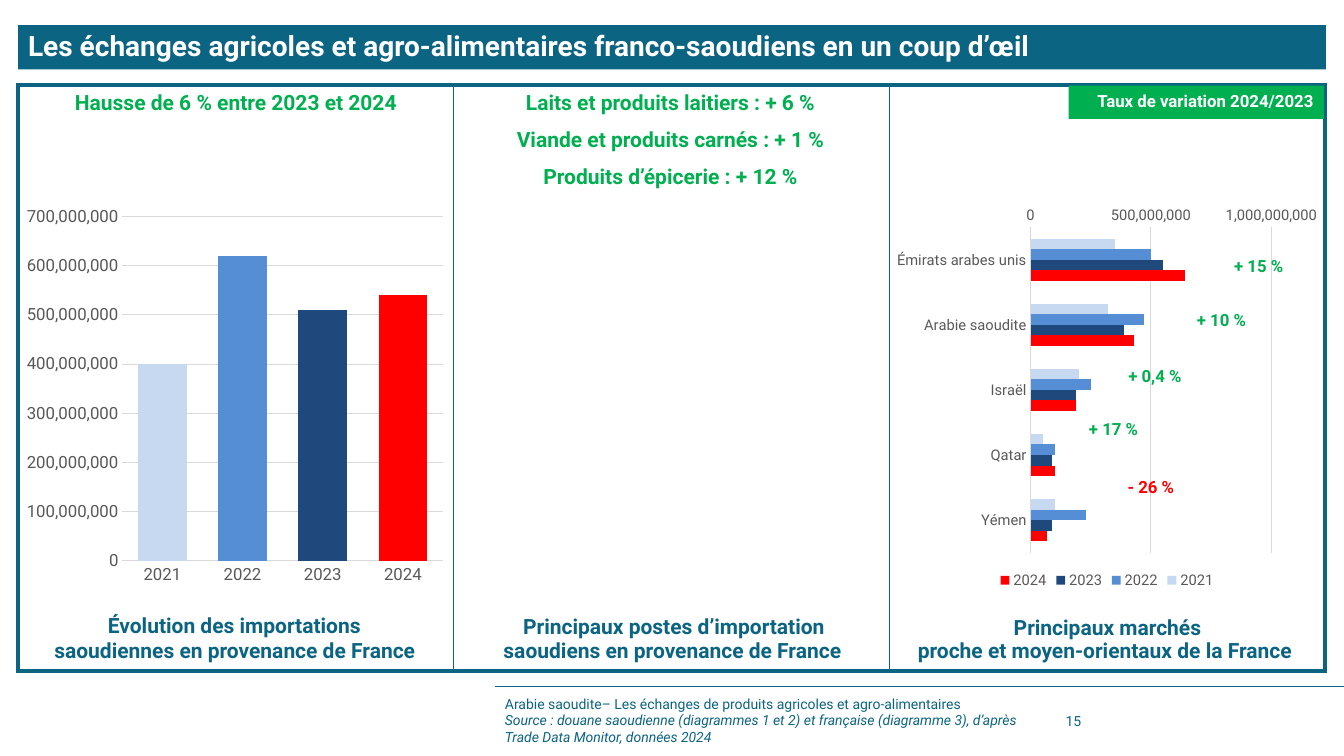
from lxml import etree
from pptx import Presentation
from pptx.chart.data import CategoryChartData
from pptx.dml.color import RGBColor
from pptx.enum.chart import XL_AXIS_CROSSES, XL_CHART_TYPE, XL_LEGEND_POSITION, XL_TICK_MARK
from pptx.enum.shapes import MSO_CONNECTOR, MSO_SHAPE
from pptx.enum.text import MSO_ANCHOR as ANCHOR, PP_ALIGN as ALIGN
from pptx.oxml.ns import qn
from pptx.util import Inches, Pt

FONT = "Roboto"
C = {"teal": "0B6482", "green": "00B050", "red": "FF0000", "white": "FFFFFF",
     "grey": "595959", "grid": "D9D9D9", "black": "000000", "base": "4F81BD"}
YEARS = {"2021": "C6D9F1", "2022": "558ED5", "2023": "1F497D", "2024": "FF0000"}


def add_text(s, box, lines, size, color, bold=True, align=ALIGN.CENTER,
             anchor=ANCHOR.MIDDLE, fill=None, spacing=1.0, before=0):
    box = [Inches(v) for v in box]
    if fill:
        sp = s.shapes.add_shape(MSO_SHAPE.RECTANGLE, *box)
        sp.shadow.inherit = False
        sp.fill.solid()
        sp.fill.fore_color.rgb = RGBColor.from_string(C[fill])
        sp.line.fill.background()
    else:
        sp = s.shapes.add_textbox(*box)
    tf = sp.text_frame
    tf.word_wrap = True
    tf.vertical_anchor = anchor
    for i, line in enumerate(lines):
        p = tf.paragraphs[0] if i == 0 else tf.add_paragraph()
        p.text = line
        p.alignment = align
        p.line_spacing = spacing
        p.space_before = Pt(before if i else 0)
        p.font.name = FONT
        p.font.size = Pt(size)
        p.font.bold = bold
        p.font.color.rgb = RGBColor.from_string(C[color])
    return tf


def add_bars(s, kind, box, cats, series, size, gap, overlap, top, step):
    data = CategoryChartData(number_format="#,##0")
    data.categories = cats
    for name, millions in series.items():
        data.add_series(name, [v * 1_000_000 for v in millions])
    chart = s.shapes.add_chart(kind, *[Inches(v) for v in box], data).chart
    chart.has_title = False
    chart.has_legend = False
    chart.font.name = FONT
    chart.font.size = Pt(size)
    chart.font.color.rgb = RGBColor.from_string(C["black"])
    plot = chart.plots[0]
    plot.gap_width = gap
    plot.overlap = overlap
    plot.vary_by_categories = False
    for axis in (chart.category_axis, chart.value_axis):
        axis.major_tick_mark = axis.minor_tick_mark = XL_TICK_MARK.NONE
        axis.tick_labels.font.name = FONT
        axis.tick_labels.font.size = Pt(size)
        axis.tick_labels.font.color.rgb = RGBColor.from_string(C["grey"])
    values = chart.value_axis
    values.minimum_scale = 0
    values.maximum_scale = top
    values.major_unit = step
    values.tick_labels.number_format = "#,##0"
    values.tick_labels.number_format_is_linked = False
    values.format.line.fill.background()
    for line in (chart.category_axis.format.line, values.major_gridlines.format.line):
        line.color.rgb = RGBColor.from_string(C["grid"])
        line.width = Pt(0.75)
    return chart


prs = Presentation()
prs.slide_width, prs.slide_height = Inches(13.33), Inches(7.5)
s = prs.slides.add_slide(prs.slide_layouts[6])

rule = s.shapes.add_connector(MSO_CONNECTOR.STRAIGHT, Inches(13.33), Inches(6.81),
                              Inches(4.91), Inches(6.81))
rule.line.color.rgb = RGBColor.from_string(C["teal"])
rule.line.width = Pt(0.5)
etree.SubElement(rule._element.spPr, qn("a:effectLst"))

table = s.shapes.add_table(1, 3, Inches(0.18), Inches(0.84), Inches(12.96), Inches(5.82)).table
table.first_row = table.horz_banding = False
for col in range(3):
    cell = table.cell(0, col)
    tcPr = cell._tc.get_or_add_tcPr()
    widths = {"lnL": 1 if col else 3, "lnR": 3 if col == 2 else 1, "lnT": 3, "lnB": 3}
    for side, width in widths.items():
        ln = etree.SubElement(tcPr, qn(f"a:{side}"), w=str(Pt(width)))
        solid = etree.SubElement(ln, qn("a:solidFill"))
        etree.SubElement(solid, qn("a:srgbClr"), val=C["teal"])
    cell.fill.background()

add_text(s, (0.18, 0.25, 12.97, 0.44),
         ["Les échanges agricoles et agro-alimentaires franco-saoudiens en un coup d’œil"],
         20, "white", align=ALIGN.LEFT, fill="teal", spacing=0.9)

captions = [
    (0.17, 6.03, 0.18, "Évolution des importations", "saoudiennes en provenance de France"),
    (4.53, 6.04, 4.52, "Principaux postes d’importation", "saoudiens en provenance de France"),
    (8.83, 6.05, 8.81, "Principaux marchés", "proche et moyen-orientaux de la France"),
]
for x1, y1, x2, first, second in captions:
    add_text(s, (x1, y1, 4.31, 0.35), [first], 15, "teal", anchor=ANCHOR.TOP)
    add_text(s, (x2, 6.3, 4.3, 0.33), [second], 15, "teal", spacing=0.9)

add_text(s, (0.23, 0.87, 4.22, 0.36), ["Hausse de 6 % entre 2023 et 2024"],
         15, "green", anchor=ANCHOR.TOP, spacing=0.9)
add_text(s, (4.54, 0.87, 4.22, 1.44),
         ["Laits et produits laitiers : + 6 %", "Viande et produits carnés : + 1 %",
          "Produits d’épicerie : + 12 %"],
         15, "green", anchor=ANCHOR.TOP, spacing=0.9, before=10)
add_text(s, (10.6, 0.85, 2.53, 0.33), ["Taux de variation 2024/2023"],
         12, "white", align=ALIGN.RIGHT, fill="green", spacing=0.9)

imports = add_bars(s, XL_CHART_TYPE.COLUMN_CLUSTERED, (0.18, 1.97, 4.3, 3.91), list(YEARS),
                   {"Series 1": [400, 620, 510, 540]}, 12, 65, -27, 700_000_000, 100_000_000)
bars = imports.plots[0].series[0]
bars.format.fill.solid()
bars.format.fill.fore_color.rgb = RGBColor.from_string(C["base"])
for i, color in enumerate(YEARS.values()):
    fill = bars.points[i].format.fill
    fill.solid()
    fill.fore_color.rgb = RGBColor.from_string(color)

markets = add_bars(s, XL_CHART_TYPE.BAR_CLUSTERED, (8.81, 1.97, 4.34, 3.91),
                   ["Émirats arabes unis", "Arabie saoudite", "Israël", "Qatar", "Yémen"],
                   {"2021": [350, 320, 200, 50, 100], "2022": [500, 470, 250, 100, 230],
                    "2023": [550, 390, 190, 90, 90], "2024": [640, 430, 190, 100, 70]},
                   10.5, 219, 0, 1_000_000_000, 500_000_000)
markets.category_axis.reverse_order = True
markets.category_axis.crosses = XL_AXIS_CROSSES.MAXIMUM
for year in markets.plots[0].series:
    year.format.fill.solid()
    year.format.fill.fore_color.rgb = RGBColor.from_string(YEARS[year.name])
markets.has_legend = True
legend = markets.legend
legend.position = XL_LEGEND_POSITION.BOTTOM
legend.include_in_layout = False
legend.font.name = FONT
legend.font.size = Pt(10.5)
legend.font.color.rgb = RGBColor.from_string(C["grey"])

changes = [(11.95, 2.47, 0.33, "+ 15 %"), (11.58, 3, 0.34, "+ 10 %"), (10.92, 3.61, 0.24, "+ 0,4 %"),
           (10.51, 4.14, 0.23, "+ 17 %"), (10.88, 4.7, 0.26, "- 26 %")]
for x, y, h, label in changes:
    add_text(s, (x, y, 1.07, h), [label], 12, "red" if label.startswith("-") else "green")

footer = add_text(s, (4.91, 6.87, 5.43, 0.55),
                  ["Arabie saoudite– Les échanges de produits agricoles et agro-alimentaires",
                   "Source : douane saoudienne (diagrammes 1 et 2) et française (diagramme 3), "
                   "d’après Trade Data Monitor, données 2024"],
                  10, "teal", bold=False, align=ALIGN.LEFT)
footer.paragraphs[1].font.italic = True
add_text(s, (10.47, 6.95, 0.99, 0.4), ["15"], 10, "teal", bold=False, align=ALIGN.LEFT)

prs.save("out.pptx")
